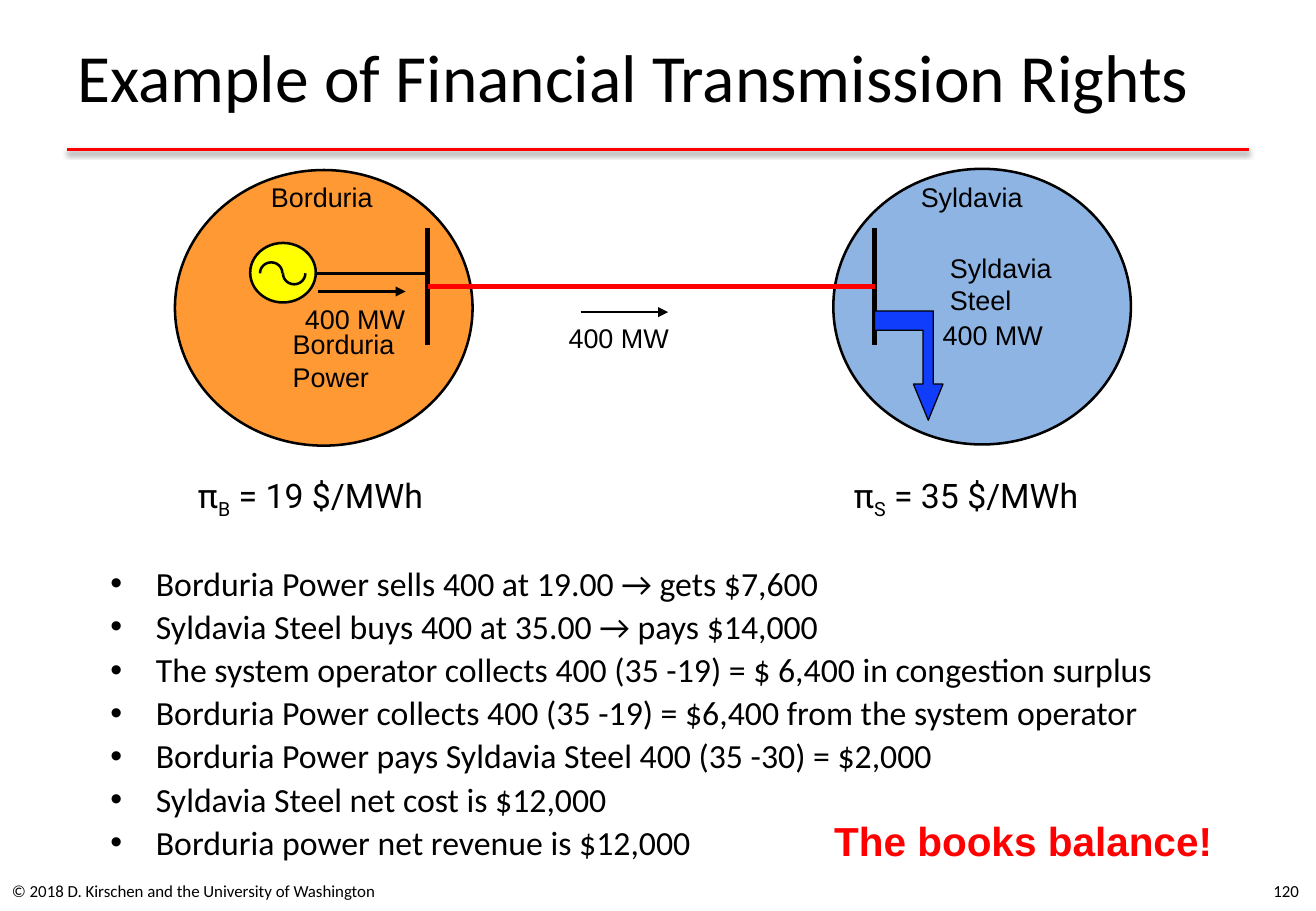
from pptx import Presentation
from pptx.dml.color import RGBColor
from pptx.enum.shapes import MSO_CONNECTOR, MSO_SHAPE
from pptx.enum.text import MSO_ANCHOR, PP_ALIGN
from pptx.oxml import parse_xml
from pptx.oxml.ns import nsdecls
from pptx.util import Pt

BUS_TOP, BUS_BOTTOM = 135.4, 204.5
BULLETS = [
    "Borduria Power sells 400 at 19.00 → gets $7,600",
    "Syldavia Steel buys 400 at 35.00 → pays $14,000",
    "The system operator collects 400 (35 -19) = $ 6,400 in congestion surplus",
    "Borduria Power collects 400 (35 -19) = $6,400 from the system operator",
    "Borduria Power pays Syldavia Steel 400 (35 -30) = $2,000",
    "Syldavia Steel net cost is $12,000",
    "Borduria power net revenue is $12,000",
]


def rgb(color):
    return RGBColor.from_string(color)


def add_run(p, text, size=16, font="Arial", color="000000", bold=False):
    r = p.add_run()
    r.text = text
    r.font.size, r.font.name, r.font.bold = Pt(size), font, bold
    r.font.color.rgb = rgb(color)
    return r


def add_text(s, x, y, w, h, text="", inset=True, wrap=True,
             anchor=MSO_ANCHOR.TOP, align=PP_ALIGN.LEFT, **fmt):
    tf = s.shapes.add_textbox(Pt(x), Pt(y), Pt(w), Pt(h)).text_frame
    tf.word_wrap, tf.vertical_anchor = wrap, anchor
    if not inset:
        tf.margin_left = tf.margin_right = tf.margin_top = tf.margin_bottom = 0
    p = tf.paragraphs[0]
    p.alignment = align
    if text:
        add_run(p, text, **fmt)
    return tf


def add_label(s, x, y, text, w=86.4):
    add_text(s, x, y, w, 26.6, text, inset=False)


def style(sp, fill=None, width=1.5):
    sp.shadow.inherit = False
    if fill:
        sp.fill.solid()
        sp.fill.fore_color.rgb = rgb(fill)
    else:
        sp.fill.background()
    sp.line.color.rgb = rgb("000000")
    sp.line.width = Pt(width)


def add_ellipse(s, x, y, w, h, fill):
    style(s.shapes.add_shape(MSO_SHAPE.OVAL, Pt(x), Pt(y), Pt(w), Pt(h)), fill)


def add_line(s, x1, y1, x2, y2, width=1.5, color="000000", arrow=False, shadow=""):
    c = s.shapes.add_connector(MSO_CONNECTOR.STRAIGHT, Pt(x1), Pt(y1), Pt(x2), Pt(y2))
    c.line.color.rgb = rgb(color)
    c.line.width = Pt(width)
    if arrow:
        c.line._get_or_add_ln().append(
            parse_xml(f'<a:tailEnd {nsdecls("a")} type="triangle"/>'))
    c._element.spPr.append(
        parse_xml(f'<a:effectLst {nsdecls("a")}>{shadow}</a:effectLst>'))


def add_flow(s, x, y, label_x, label_y):
    add_line(s, x, y, x + 51.8, y, arrow=True)
    add_label(s, label_x, label_y, "400 MW")


def add_header(s, x, y, w):
    add_text(s, x, y, 689, 54, "Example of Financial Transmission Rights",
             anchor=MSO_ANCHOR.MIDDLE, size=40, font="Calibri")
    add_line(s, x + 0.7, y + 70.6, x + w, y + 70.6, 2, "FF0000",
             shadow='<a:outerShdw blurRad="39400" dist="20300" dir="5400000" rotWithShape="0">'
                    '<a:srgbClr val="000000"><a:alpha val="38000"/></a:srgbClr></a:outerShdw>')


def add_region(s, x, y, name, name_x, fill, bus_x):
    add_ellipse(s, x, y, 176.4, 163.4, fill)
    add_label(s, name_x, 107.3, name)
    add_line(s, bus_x, BUS_TOP, bus_x, BUS_BOTTOM, 3)


def add_generator(s, x, y, bus_x):
    add_ellipse(s, x, y, 38.9, 35.3, "FFFF00")
    # Sine wave: an upper then a lower half circle, angles in 0.6 per degree
    for dx, start, end in [(5.8, 108, 0), (19.4, 0, 108)]:
        arc = s.shapes.add_shape(MSO_SHAPE.ARC, Pt(x + dx), Pt(y + 11.5), Pt(13.3), Pt(13))
        arc.adjustments[0], arc.adjustments[1] = start, end
        style(arc)
    add_line(s, x + 39.6, y + 18, bus_x, y + 18)
    add_flow(s, x + 40.3, y + 28.8, x + 32.4, y + 35.3)
    add_label(s, x + 25.2, y + 50.4, "Borduria Power")


def add_load(s, x, y):
    # Bent arrow leaving the bus
    points = [(0, 0), (34.8, 0), (34.8, 43.4), (40.5, 43.4), (31.8, 64.8),
              (23, 43.4), (28.7, 43.4), (28.7, 11.5), (0, 11.5)]
    outline = [(Pt(x + dx), Pt(y + dy)) for dx, dy in points]
    fb = s.shapes.build_freeform(*outline[0])
    fb.add_line_segments(outline[1:], close=True)
    style(fb.convert_to_shape(), "103DFC", 0.75)
    add_label(s, x + 40.3, y + 4.3, "400 MW")
    add_label(s, x + 44.7, y - 35.3, "Syldavia Steel")


def add_price(s, x, y, region, price):
    p = add_text(s, x, y, 149.8, 31.7, wrap=False).paragraphs[0]
    for text in ("π", region, f" = {price} $/MWh"):
        r = add_run(p, text, size=20, font="Roboto")
        if text == region:
            r.font._element.set("baseline", "-25000")


def add_bullets(s, x, y, w, h):
    tf = add_text(s, x, y, w, h)
    for i, text in enumerate(BULLETS):
        p = tf.add_paragraph() if i else tf.paragraphs[0]
        p.line_spacing, p.space_before = 0.9, Pt(4)
        pPr = p._p.get_or_add_pPr()
        pPr.set("marL", str(Pt(27)))
        pPr.set("indent", str(-Pt(27)))
        pPr.append(parse_xml(f'<a:buFont {nsdecls("a")} typeface="Arial"/>'))
        pPr.append(parse_xml(f'<a:buChar {nsdecls("a")} char="•"/>'))
        add_run(p, text, size=20, font="Calibri")


def add_footer(s, y):
    fmt = dict(anchor=MSO_ANCHOR.MIDDLE, size=10, font="Calibri")
    add_text(s, 0, y, 255, 28.8, "© 2018 D. Kirschen and the University of Washington", **fmt)
    add_text(s, 594.7, y, 182.2, 28.8, "120", align=PP_ALIGN.RIGHT, **fmt)


def main():
    prs = Presentation()
    prs.slide_width, prs.slide_height = Pt(780), Pt(540)
    s = prs.slides.add_slide(prs.slide_layouts[6])
    bus_b, bus_s = 253.4, 518.4

    add_header(s, 38.9, 18, 701.3)
    # Two regions and the line between them
    add_region(s, 103.7, 100.8, "Borduria", 160.6, "FF9933", bus_b)
    add_generator(s, 148.3, 144, bus_b)
    add_region(s, 493.9, 100.1, "Syldavia", 545.8, "8EB4E3", bus_s)
    add_load(s, bus_s, 184.3)
    add_line(s, bus_b, 169.9, bus_s, 169.9, 3, "FF0000")
    add_flow(s, 344.2, 185, 337, 190.8)
    # Prices, settlement and conclusion
    add_price(s, 110.2, 277.9, "B", 19)
    add_price(s, 499, 277.9, "S", 35)
    add_bullets(s, 58.3, 332.6, 695.5, 203.8)
    add_text(s, 487.4, 480.2, 240.5, 36, "The books balance!", wrap=False,
             size=24, color="FF0000", bold=True)
    add_footer(s, 513.4)
    prs.save("out.pptx")


if __name__ == "__main__":
    main()
